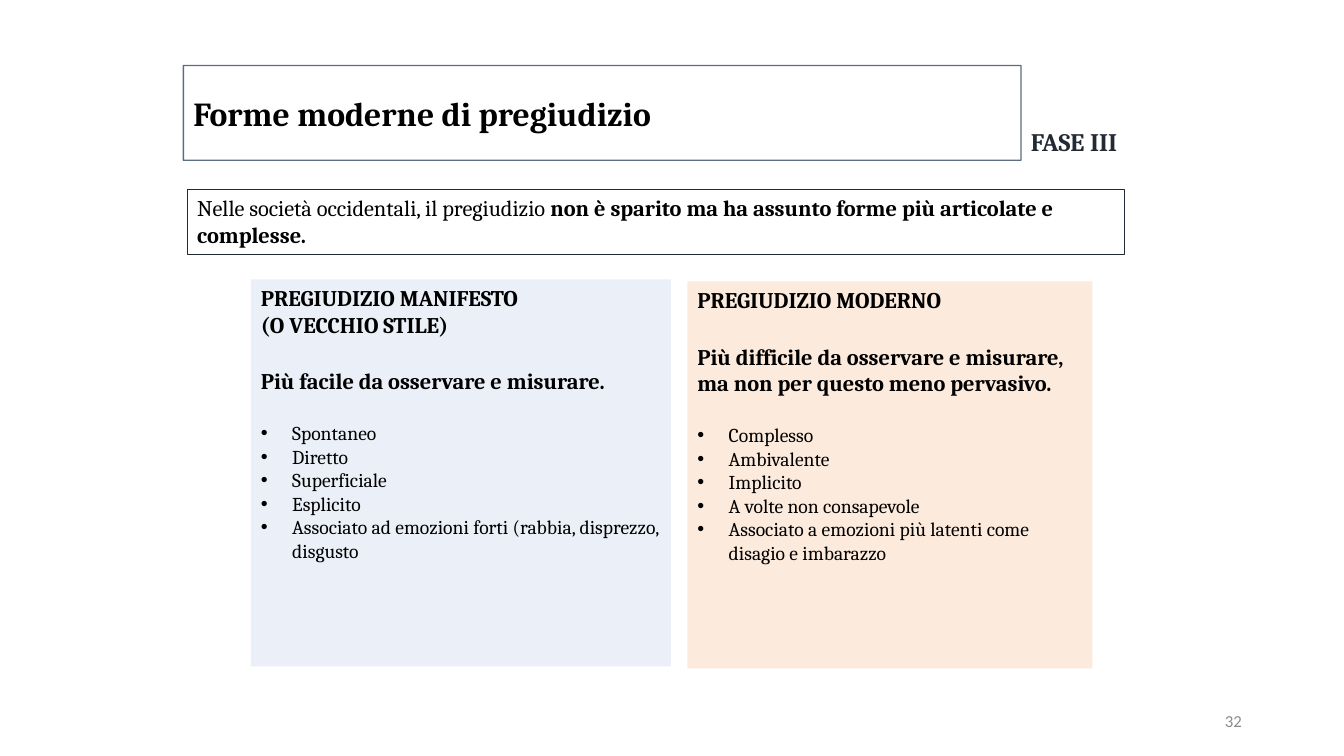
from lxml import etree
from pptx import Presentation
from pptx.dml.color import RGBColor
from pptx.enum.shapes import MSO_SHAPE
from pptx.enum.text import MSO_ANCHOR, MSO_AUTO_SIZE, PP_ALIGN
from pptx.oxml.ns import qn
from pptx.util import Cm, Pt

LEFT, RIGHT = PP_ALIGN.LEFT, PP_ALIGN.RIGHT
TOP, MIDDLE = MSO_ANCHOR.TOP, MSO_ANCHOR.MIDDLE
NO_FIT = MSO_AUTO_SIZE.NONE
RECT = MSO_SHAPE.RECTANGLE
COLORS = {"text": "000000", "phase": "222A35", "frame": "44546A",
          "number": "8C8C8C", "manifest": "4472C4", "modern": "ED7D31"}
HEADING = {"name": "Cambria", "size": Pt(16), "bold": True}
BODY = {"name": "Cambria", "size": Pt(16), "bold": False}
ITEM = {"name": "Cambria", "size": Pt(14), "bold": False}
TITLE = {"name": "Cambria", "size": Pt(24), "bold": True}
PHASE = {"name": "Cambria", "size": Pt(18), "bold": True}
NUMBER = {"name": "Calibri", "size": Pt(12), "bold": False}

PANELS = [
    {"box": (6.32, 7.04, 10.59, 9.75), "color": "manifest", "alpha": 11,
     "heading": ["PREGIUDIZIO MANIFESTO", "(O VECCHIO STILE)"],
     "summary": "Più facile da osservare e misurare.",
     "items": ["Spontaneo", "Diretto", "Superficiale", "Esplicito",
               "Associato ad emozioni forti (rabbia, disprezzo, disgusto"]},
    {"box": (17.32, 7.09, 10.21, 9.75), "color": "modern", "alpha": 16,
     "heading": ["PREGIUDIZIO MODERNO"],
     "summary": "Più difficile da osservare e misurare, "
                "ma non per questo meno pervasivo.",
     "items": ["Complesso", "Ambivalente", "Implicito",
               "A volte non consapevole",
               "Associato a emozioni più latenti come disagio e imbarazzo"]},
]


def rgb(name):
    """Return the named colour."""
    return RGBColor.from_string(COLORS[name])


def place(sp, box):
    """Move and size a shape from lengths in centimetres."""
    for attr, value in zip(("left", "top", "width", "height"), box):
        setattr(sp, attr, Cm(value))


def setup_frame(sp, anchor=TOP, wrap=True):
    """Set the wrapping and anchoring of a shape's text and return its frame."""
    tf = sp.text_frame
    values = {"auto_size": NO_FIT, "word_wrap": wrap, "vertical_anchor": anchor}
    for attr, value in values.items():
        setattr(tf, attr, value)
    return tf


def add_run(p, text, fmt, color="text"):
    """Add a formatted run to a paragraph."""
    r = p.add_run()
    r.text = text
    for attr, value in fmt.items():
        setattr(r.font, attr, value)
    r.font.color.rgb = rgb(color)


def set_alpha(fill_parent, percent):
    """Set the opacity of the solid fill inside an element."""
    clr = fill_parent.find(qn("a:solidFill")).find(qn("a:srgbClr"))
    etree.SubElement(clr, qn("a:alpha")).set("val", str(percent * 1000))


def set_bullet(p, bulleted):
    """Give a paragraph a hanging bullet, or remove it."""
    pPr = p._p.get_or_add_pPr()
    indent = Cm(0.79) if bulleted else 0
    pPr.set("marL", str(indent))
    pPr.set("indent", str(-indent))
    if bulleted:
        etree.SubElement(pPr, qn("a:buChar")).set("char", "•")
    else:
        etree.SubElement(pPr, qn("a:buNone"))


def format_title(sp):
    """Fill and frame the title placeholder."""
    place(sp, (4.62, 1.65, 21.11, 2.39))
    sp.line.color.rgb = rgb("frame")
    sp.line.width = Pt(1)
    set_alpha(sp.line._get_or_add_ln(), 86)
    p = setup_frame(sp, MIDDLE).paragraphs[0]
    p.alignment = LEFT
    add_run(p, "Forme moderne di pregiudizio", TITLE)


def add_message(s):
    """Add the framed key message."""
    sp = s.shapes.add_shape(RECT, 0, 0, 0, 0)
    place(sp, (4.72, 4.78, 23.62, 1.63))
    sp.shadow.inherit = False
    sp.fill.background()
    sp.line.color.rgb = rgb("phase")
    sp.line.width = Pt(0.25)
    p = setup_frame(sp).paragraphs[0]
    p.alignment = LEFT
    add_run(p, "Nelle società occidentali, il pregiudizio ", BODY)
    add_run(p, "non è sparito ma ha assunto forme più articolate e complesse.",
            HEADING)


def add_label(s, box, text, fmt, color, align=LEFT, anchor=TOP):
    """Add a one-line text box."""
    sp = s.shapes.add_textbox(0, 0, 0, 0)
    place(sp, box)
    p = setup_frame(sp, anchor, wrap=align == RIGHT).paragraphs[0]
    p.alignment = align
    add_run(p, text, fmt, color)


def format_panel(sp, panel):
    """Fill a body placeholder with a heading, a summary and a list."""
    place(sp, panel["box"])
    sp.fill.solid()
    sp.fill.fore_color.rgb = rgb(panel["color"])
    set_alpha(sp._element.spPr, panel["alpha"])
    tf = setup_frame(sp)
    rows = [(text, HEADING, 0) for text in panel["heading"]]
    rows.append((panel["summary"], HEADING, 21))
    rows += [(text, ITEM, 0 if i else 19)
             for i, text in enumerate(panel["items"])]
    for i, (text, fmt, gap) in enumerate(rows):
        p = tf.add_paragraph() if i else tf.paragraphs[0]
        set_bullet(p, fmt is ITEM)
        p.alignment = LEFT
        p.space_before = Pt(gap)
        add_run(p, text, fmt)


def main():
    """Build and save the slide."""
    prs = Presentation()
    prs.slide_width, prs.slide_height = Cm(33.87), Cm(19.05)
    s = prs.slides.add_slide(prs.slide_layouts[3])
    title, *bodies = s.placeholders
    format_title(title)
    add_message(s)
    add_label(s, (25.73, 3.05, 2.79, 1.02), "FASE III", PHASE, "phase")
    for sp, panel in zip(bodies, PANELS):
        format_panel(sp, panel)
    add_label(s, (23.93, 17.65, 7.62, 1.02), "32", NUMBER, "number",
              RIGHT, MIDDLE)
    prs.save("out.pptx")


if __name__ == "__main__":
    main()
